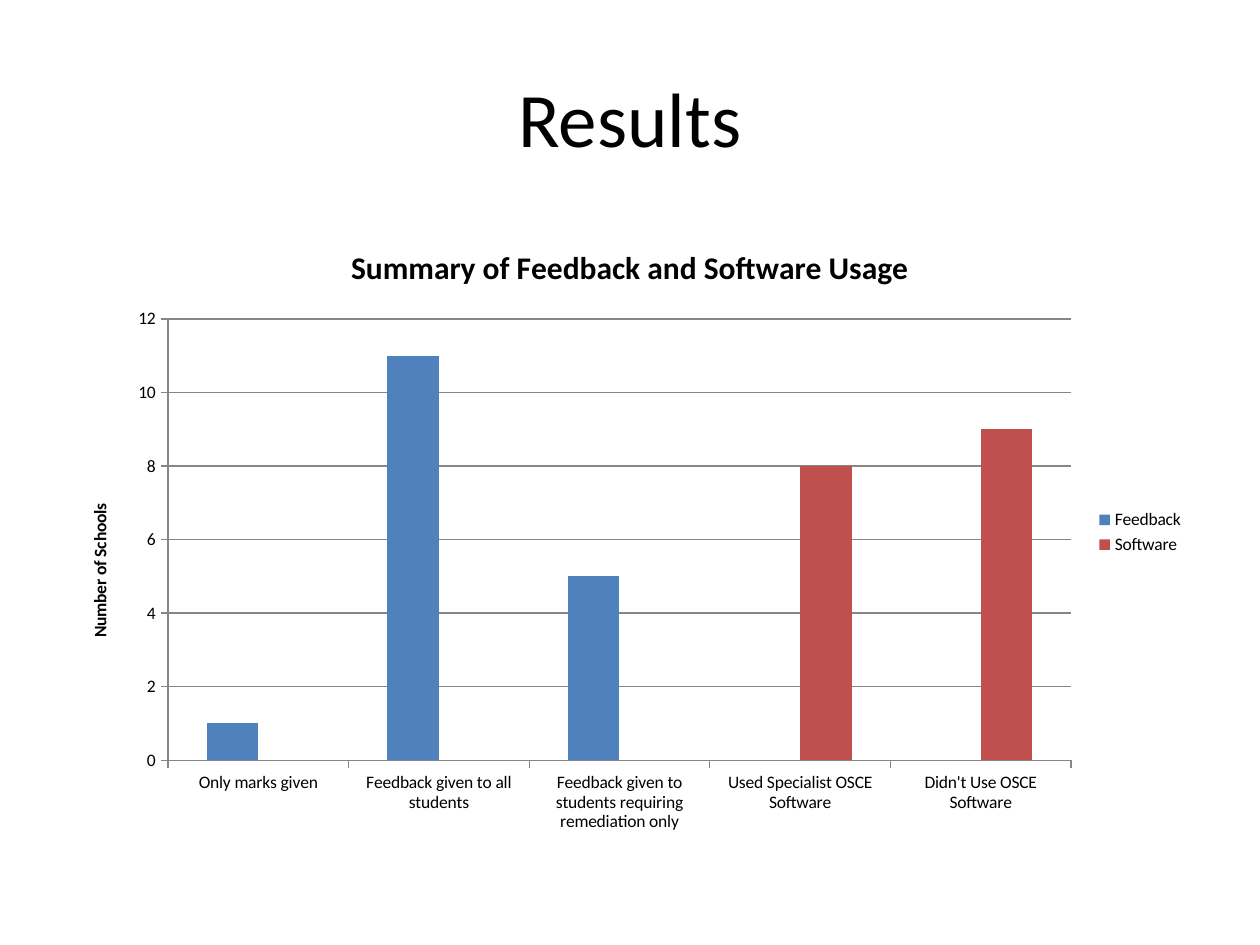
from dataclasses import dataclass

from pptx import Presentation
from pptx import util as u
from pptx.chart.chart import Chart
from pptx.chart.data import CategoryChartData
from pptx.dml.color import RGBColor
from pptx.enum import chart as kinds
from pptx.enum import text

COLOURS = {"text": "000000", "line": "868686", "feedback": "4F81BD", "software": "C0504D"}
FONT = "Calibri"
WIDTH, HEIGHT = u.Inches(10), u.Inches(7.5)


@dataclass(frozen=True)
class Area:
    left: float
    top: float
    width: float
    height: float

    def lengths(self) -> tuple[int, ...]:
        return (int(self.left * WIDTH), int(self.top * HEIGHT),
                int(self.width * WIDTH), int(self.height * HEIGHT))


@dataclass(frozen=True)
class Usage:
    name: str
    schools: tuple[int | None, ...]
    colour: str


TITLE_AREA = Area(0.05, 0.04, 0.9, 1 / 6)
CHART_AREA = Area(0.05, 0.7 / 3, 0.9, 0.66)
ANSWERS = (
    "Only marks given",
    "Feedback given to all students",
    "Feedback given to students requiring remediation only",
    "Used Specialist OSCE Software",
    "Didn't Use OSCE Software",
)
USAGES = (
    Usage("Feedback", (1, 11, 5, None, None), "feedback"),
    Usage("Software", (None, None, None, 8, 9), "software"),
)


def colour(name: str) -> RGBColor:
    return RGBColor.from_string(COLOURS[name])


def style_font(font, size: float, bold: bool = False) -> None:
    font.name = FONT
    font.size = u.Pt(size)
    font.bold = bold
    font.color.rgb = colour("text")


def write(frame, words: str, size: float, bold: bool = False) -> None:
    para = frame.paragraphs[0]
    para.alignment = text.PP_ALIGN.CENTER
    span = para.add_run()
    span.text = words
    style_font(span.font, size, bold)


def style_line(line) -> None:
    line.color.rgb = colour("line")
    line.width = u.Pt(0.75)


def add_usage_chart(page) -> Chart:
    data = CategoryChartData()
    data.categories = ANSWERS
    for usage in USAGES:
        data.add_series(usage.name, usage.schools)
    chart = page.shapes.add_chart(
        kinds.XL_CHART_TYPE.COLUMN_CLUSTERED, *CHART_AREA.lengths(), data).chart
    style_font(chart.font, 10)
    write(chart.chart_title.text_frame, "Summary of Feedback and Software Usage", 18, True)
    chart.chart_title.include_in_layout = False
    chart.has_legend = True
    chart.legend.position = kinds.XL_LEGEND_POSITION.RIGHT
    chart.legend.include_in_layout = False

    plot = chart.plots[0]
    plot.gap_width = 150
    plot.vary_by_categories = False
    for series, usage in zip(plot.series, USAGES):
        series.format.fill.solid()
        series.format.fill.fore_color.rgb = colour(usage.colour)
        series.invert_if_negative = False

    for axis in (chart.category_axis, chart.value_axis):
        axis.major_tick_mark = kinds.XL_TICK_MARK.OUTSIDE
        axis.minor_tick_mark = kinds.XL_TICK_MARK.NONE
        style_line(axis.format.line)
    schools = chart.value_axis
    schools.minimum_scale, schools.maximum_scale, schools.major_unit = 0, 12, 2
    schools.has_major_gridlines = True
    style_line(schools.major_gridlines.format.line)
    write(schools.axis_title.text_frame, "Number of Schools", 10, True)
    return chart


def main() -> None:
    deck = Presentation()
    deck.slide_width, deck.slide_height = WIDTH, HEIGHT
    page = deck.slides.add_slide(deck.slide_layouts[5])
    title = page.shapes.title
    title.left, title.top, title.width, title.height = TITLE_AREA.lengths()
    title.text_frame.vertical_anchor = text.MSO_ANCHOR.MIDDLE
    write(title.text_frame, "Results", 44)
    add_usage_chart(page)
    deck.save("out.pptx")


if __name__ == "__main__":
    main()
